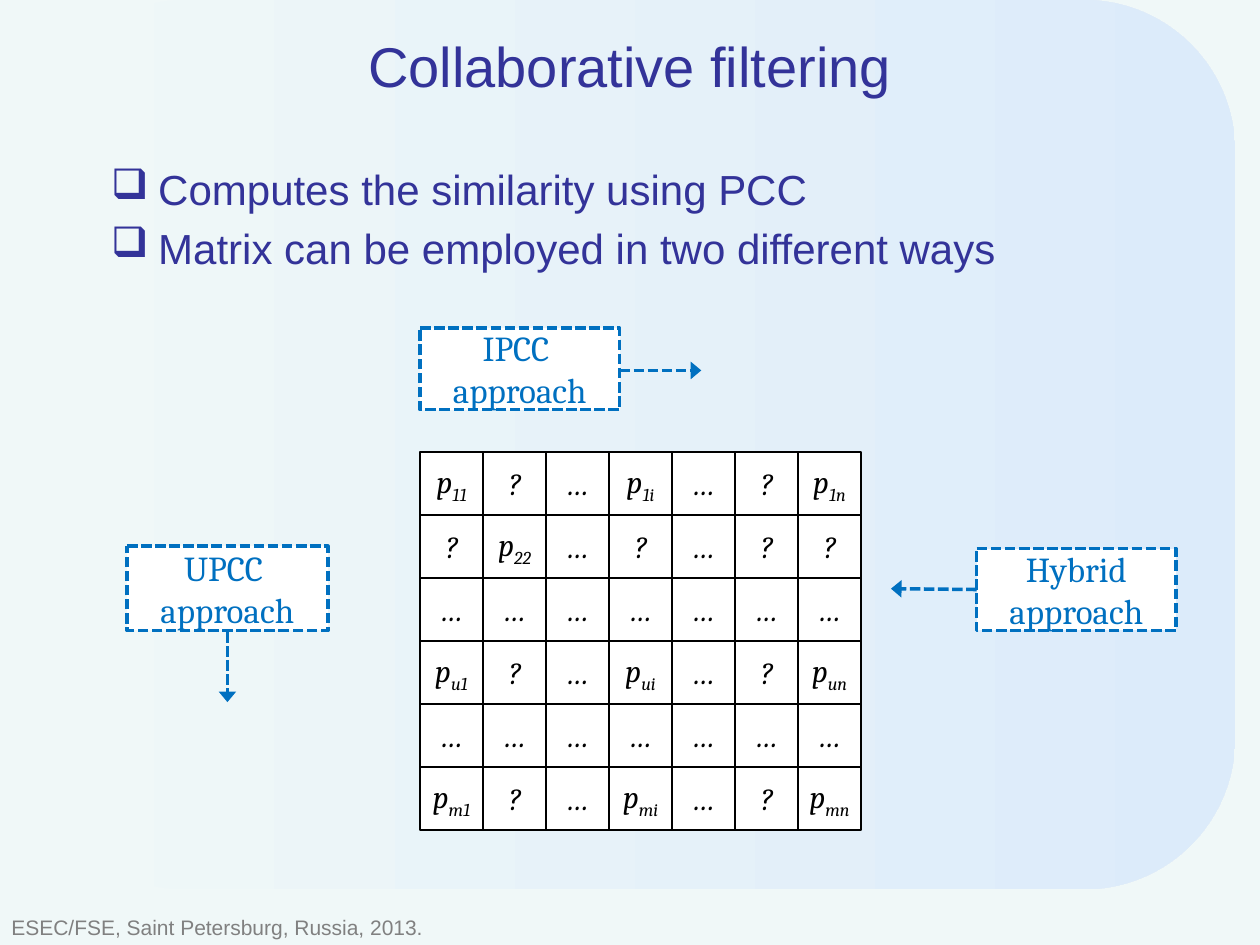
from pptx import Presentation
from pptx.dml.color import RGBColor
from pptx.enum.dml import MSO_LINE
from pptx.enum.shapes import MSO_SHAPE
from pptx.enum.text import MSO_ANCHOR, PP_ALIGN
from pptx.oxml.ns import qn
from pptx.oxml.xmlchemy import OxmlElement
from pptx.util import Cm, Pt

ROUNDED, CALLOUT = MSO_SHAPE.ROUNDED_RECTANGLE, MSO_SHAPE.LINE_CALLOUT_1
SQUARE = MSO_SHAPE.RECTANGLE
TOP, MIDDLE = MSO_ANCHOR.TOP, MSO_ANCHOR.MIDDLE
LEFT, CENTER = PP_ALIGN.LEFT, PP_ALIGN.CENTER
SHORT_DASH = MSO_LINE.SQUARE_DOT

COLORS = {
    "background": "F0F8F8",
    "panel_end": "DCEBFA",
    "heading": "333399",
    "footer": "808080",
    "approach": "0070C0",
    "matrix": "000000",
    "white": "FFFFFF",
}

MATRIX = [
    ["p_11", "?", "…", "p_1i", "…", "?", "p_1n"],
    ["?", "p_22", "…", "?", "…", "?", "?"],
    ["…"] * 7,
    ["p_u1", "?", "…", "p_ui", "…", "?", "p_un"],
    ["…"] * 7,
    ["p_m1", "?", "…", "p_mi", "…", "?", "p_mn"],
]

# Lines, box in cm, leader as (y1, x1, y2, x2) in fractions of the box
APPROACHES = [
    (["UPCC ", "approach"], (2.56, 11.01, 4.05, 1.7), (1.02, 0.5, 1.85, 0.5)),
    (["IPCC ", "approach"], (8.47, 6.61, 4.02, 1.65), (0.52, 1, 0.52, 1.41)),
    (["Hybrid approach"], (19.69, 11.06, 4.02, 1.65), (0.5, 0, 0.49, -0.43)),
]


def rgb(name):
    return RGBColor.from_string(COLORS[name])


def add_run(paragraph, text, size, font, color, italic=False):
    run = paragraph.add_run()
    run.text = text
    run.font.size = Pt(size)
    run.font.name = font
    run.font.italic = italic
    run.font.color.rgb = rgb(color)
    return run


def xml_child(parent, tag, **attributes):
    child = OxmlElement(tag)
    for name, value in attributes.items():
        child.set(name, value)
    parent.append(child)
    return child


def paragraphs_for(frame, lines):
    """Yield one paragraph per line, starting with the frame's own."""
    for index, line in enumerate(lines):
        yield (frame.add_paragraph() if index else frame.paragraphs[0]), line


def add_outlined(shapes, kind, box, color, line_width):
    """Add a white outlined shape whose text is centred without margins."""
    shape = shapes.add_shape(kind, *map(Cm, box))
    shape.shadow.inherit = False
    shape.fill.solid()
    shape.fill.fore_color.rgb = rgb("white")
    shape.line.color.rgb = rgb(color)
    shape.line.width = Pt(line_width)
    frame = shape.text_frame
    frame.word_wrap = True
    frame.vertical_anchor = MIDDLE
    frame.margin_left = frame.margin_right = 0
    frame.margin_top = frame.margin_bottom = 0
    return shape


def add_background(slide, box):
    slide.background.fill.solid()
    slide.background.fill.fore_color.rgb = rgb("background")
    panel = slide.shapes.add_shape(ROUNDED, *map(Cm, box))
    panel.shadow.inherit = False
    panel.adjustments[0] = 0.17
    panel.line.fill.background()
    panel.fill.gradient()
    panel.fill.gradient_angle = 0
    for stop, color in zip(panel.fill.gradient_stops, ("background", "panel_end")):
        stop.color.rgb = rgb(color)


def add_line(slide, box, text, size, color, align, anchor):
    frame = slide.shapes.add_textbox(*map(Cm, box)).text_frame
    frame.word_wrap = True
    frame.vertical_anchor = anchor
    frame.paragraphs[0].alignment = align
    add_run(frame.paragraphs[0], text, size, "Arial", color)


def add_bullets(slide, box, points):
    frame = slide.shapes.add_textbox(*map(Cm, box)).text_frame
    frame.word_wrap = True
    for paragraph, point in paragraphs_for(frame, points):
        properties = paragraph._p.get_or_add_pPr()
        properties.set("marL", str(Cm(0.95)))
        properties.set("indent", str(-Cm(0.95)))
        bullet_color = xml_child(properties, "a:buClr")
        xml_child(bullet_color, "a:srgbClr", val=COLORS["heading"])
        # Hollow shadowed square in the symbol font
        xml_child(properties, "a:buFont", typeface="Wingdings", charset="2")
        xml_child(properties, "a:buChar", char="q")
        if point != points[0]:
            paragraph.space_before = Pt(4.8)
        add_run(paragraph, point, 24, "Arial", "heading")


def add_matrix(slide, left, top, cell_size):
    matrix = slide.shapes.add_group_shape()
    for row, entries in enumerate(MATRIX):
        for column, entry in enumerate(entries):
            box = (left + column * cell_size, top + row * cell_size,
                   cell_size, cell_size)
            cell = add_outlined(matrix.shapes, SQUARE, box, "matrix", 1)
            paragraph = cell.text_frame.paragraphs[0]
            paragraph.alignment = CENTER
            symbol, _, subscript = entry.partition("_")
            add_run(paragraph, symbol, 18, "Cambria", "matrix", italic=True)
            if subscript:
                index = add_run(paragraph, subscript, 18, "Cambria", "matrix", italic=True)
                index.font._element.set("baseline", "-25000")


def add_approach(slide, lines, box, leader):
    callout = add_outlined(slide.shapes, CALLOUT, box, "approach", 2)
    for index, fraction in enumerate(leader):
        callout.adjustments[index] = fraction
    callout.line.dash_style = SHORT_DASH
    # Wide arrowhead at the free end of the leader
    outline = callout._element.spPr.find(qn("a:ln"))
    xml_child(outline, "a:tailEnd", type="triangle", w="lg", len="med")
    for paragraph, line in paragraphs_for(callout.text_frame, lines):
        paragraph.alignment = CENTER
        add_run(paragraph, line, 20, "Cambria", "approach")


def main():
    presentation = Presentation()
    presentation.slide_width, presentation.slide_height = Cm(25.4), Cm(19.05)
    slide = presentation.slides.add_slide(presentation.slide_layouts[6])

    add_background(slide, (0.69, 0, 24.21, 17.93))
    add_line(slide, (1.98, 0, 21.44, 2.62), "Collaborative filtering",
             32, "heading", CENTER, MIDDLE)
    add_bullets(slide, (1.99, 3.18, 21.44, 14.4), [
        "Computes the similarity using PCC",
        "Matrix can be employed in two different ways",
    ])
    add_line(slide, (-0.02, 18.31, 10.19, 0.74),
             "ESEC/FSE, Saint Petersburg, Russia, 2013.",
             12, "footer", LEFT, TOP)
    add_matrix(slide, 8.47, 9.11, 1.27)
    for lines, box, leader in APPROACHES:
        add_approach(slide, lines, box, leader)

    presentation.save("out.pptx")


if __name__ == "__main__":
    main()
